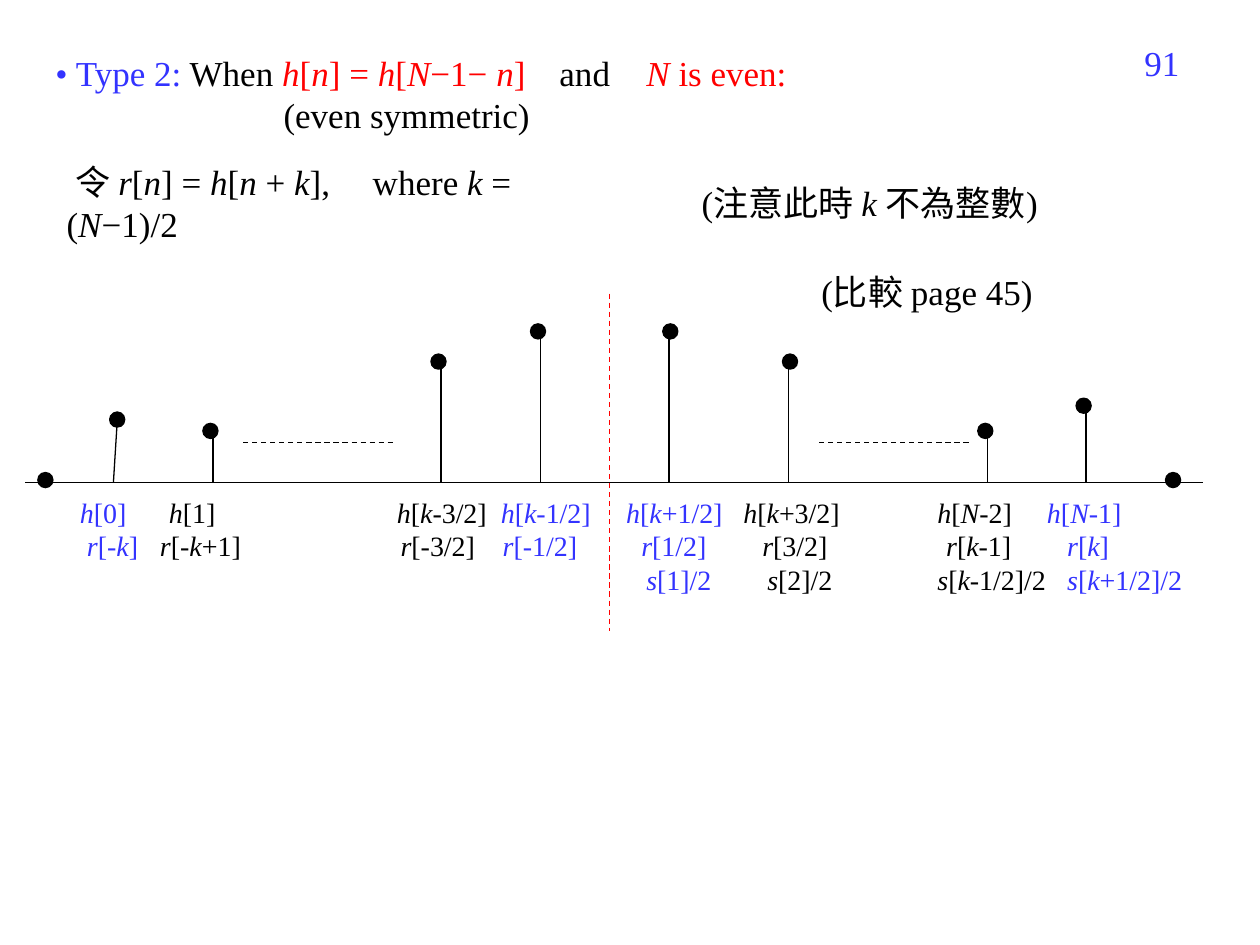
from collections import namedtuple
from dataclasses import dataclass

from lxml.etree import SubElement
from pptx import Presentation
from pptx.dml.color import RGBColor
from pptx.enum.dml import MSO_LINE as DASH
from pptx.enum.shapes import MSO_CONNECTOR as CONN, MSO_SHAPE as SHAPE
from pptx.enum.text import MSO_ANCHOR as ANCHOR, MSO_AUTO_SIZE as FIT, PP_ALIGN as ALIGN
from pptx.oxml.ns import qn
from pptx.util import Inches, Pt

CELL = 0.1  # inches per grid column and row; the slide is 100 by 75 cells


@dataclass(frozen=True)
class Theme:
    font: str = "Times New Roman"
    body: int = 20
    label: int = 16
    rule: float = 0.75
    black: RGBColor = RGBColor(0x00, 0x00, 0x00)
    white: RGBColor = RGBColor(0xFF, 0xFF, 0xFF)
    blue: RGBColor = RGBColor(0x33, 0x33, 0xFF)
    red: RGBColor = RGBColor(0xFF, 0x00, 0x00)


THEME = Theme()
Stem = namedtuple("Stem", "foot top dot_x dot_y")

AXIS = 38.3
DOT = 1.2
STEMS = [
    Stem(9.0, 9.3, 9.3, 33.3),
    Stem(16.9, 16.9, 16.7, 34.2),
    Stem(35.0, 35.0, 34.8, 28.7),
    Stem(42.9, 42.9, 42.7, 26.3),
    Stem(53.1, 53.1, 53.2, 26.3),
    Stem(62.6, 62.6, 62.7, 28.7),
    Stem(78.4, 78.4, 78.2, 34.2),
    Stem(86.2, 86.2, 86.0, 32.2),
]
AXIS_ENDS = [(3.6, 38.1), (93.1, 38.1)]

# Asterisks enclose italics; each label starts at its own tab stop.
BLUE_COLUMNS = {0, 3, 4, 7}
LABEL_ROWS = [
    (0, ["*h*[0]", "*h*[1]", "*h*[*k*-3/2]", "*h*[*k*-1/2]",
         "*h*[*k*+1/2]", "*h*[*k*+3/2]", "*h*[*N*-2]", "*h*[*N*-1]"],
     [4.35, 11.4, 29.5, 37.75, 47.7, 57.0, 72.4, 81.1]),
    (0, ["*r*[-*k*]", "*r*[-*k*+1]", "*r*[-3/2]", "*r*[-1/2]",
         "*r*[1/2]", "*r*[3/2]", "*r*[*k*-1]", "*r*[*k*]"],
     [4.9, 10.7, 29.8, 37.9, 48.9, 58.5, 73.1, 82.7]),
    (4, ["*s*[1]/2", "*s*[2]/2", "*s*[*k*-1/2]/2", "*s*[*k*+1/2]/2"],
     [49.3, 58.9, 72.4, 82.7]),
]


def cells(*values):
    return [Inches(v * CELL) for v in values]


class Board:
    """Holds the theme and the current slide, and draws on its grid."""

    def __init__(self, slide, theme):
        self.slide, self.theme = slide, theme

    def fill_frame(self, tf, paragraphs, size, **fmt):
        """Fill a frame with (pieces, tab stops) paragraphs; a piece is (markup, colour)."""
        frame = {"word_wrap": True, "auto_size": FIT.NONE,
                 "vertical_anchor": ANCHOR.TOP, **fmt}
        align = frame.pop("align", ALIGN.LEFT)
        for name, value in frame.items():
            setattr(tf, name, value)
        for i, (pieces, stops) in enumerate(paragraphs):
            p = tf.paragraphs[0] if i == 0 else tf.add_paragraph()
            p.alignment = align
            if stops:
                tabs = SubElement(p._p.get_or_add_pPr(), qn("a:tabLst"))
                for pos in cells(*stops):
                    SubElement(tabs, qn("a:tab"), pos=str(int(pos)), algn="l")
            for markup, color in pieces:
                self.runs(p, markup, color, size)

    def runs(self, p, markup, color, size):
        for i, part in enumerate(markup.split("*")):
            if part:
                r = p.add_run()
                r.text = part
                style = {"name": self.theme.font, "size": Pt(size),
                         "italic": i % 2 == 1, "bold": False}
                for name, value in style.items():
                    setattr(r.font, name, value)
                r.font.color.rgb = color

    def title(self, box, paragraphs):
        sp = self.slide.shapes.title
        for name, value in zip(("left", "top", "width", "height"), cells(*box)):
            setattr(sp, name, value)
        self.fill_frame(sp.text_frame, paragraphs, self.theme.body)

    def text(self, box, markup, color=None, stops=(), **fmt):
        sp = self.slide.shapes.add_textbox(*cells(*box))
        pieces = [(markup, color or self.theme.black)]
        self.fill_frame(sp.text_frame, [(pieces, stops)], self.theme.body, **fmt)

    def panel(self, box, paragraphs):
        sp = self.slide.shapes.add_shape(SHAPE.RECTANGLE, *cells(*box))
        sp.shadow.inherit = False
        sp.fill.solid()
        sp.fill.fore_color.rgb = self.theme.white
        sp.line.fill.background()
        margins = {f"margin_{side}": 0 for side in ("left", "top", "right", "bottom")}
        self.fill_frame(sp.text_frame, paragraphs, self.theme.label, **margins)

    def line(self, start, end, color=None, dash=None):
        ln = self.slide.shapes.add_connector(CONN.STRAIGHT, *cells(*start, *end))
        ln.line.color.rgb = color or self.theme.black
        ln.line.width = Pt(self.theme.rule)
        if dash:
            ln.line.dash_style = dash
        SubElement(ln._element.spPr, qn("a:effectLst"))

    def dot(self, x, y):
        sp = self.slide.shapes.add_shape(
            SHAPE.OVAL, *cells(x - DOT / 2, y - DOT / 2, DOT, DOT))
        sp.shadow.inherit = False
        sp.fill.solid()
        sp.fill.fore_color.rgb = sp.line.color.rgb = self.theme.black
        sp.line.width = Pt(self.theme.rule)


def label_paragraphs():
    for first, labels, stops in LABEL_ROWS:
        yield [("\t" + label, THEME.blue if col in BLUE_COLUMNS else THEME.black)
               for col, label in enumerate(labels, first)], stops


def draw_stem_plot(board):
    board.line((2, AXIS), (95.5, AXIS))
    for stem in STEMS:
        board.line((stem.top, stem.dot_y + 0.2), (stem.foot, AXIS))
    for left in (19.3, 65.0):
        board.line((left, 35.1), (left + 12.1, 35.1), dash=DASH.DASH)
    for x, y in AXIS_ENDS + [(s.dot_x, s.dot_y) for s in STEMS]:
        board.dot(x, y)
    board.panel((2, 39.3, 92.4, 7.5), label_paragraphs())
    board.line((48.4, 23.3), (48.4, 50.1), THEME.red, DASH.DASH)


def main():
    prs = Presentation()
    prs.slide_width, prs.slide_height = cells(100, 75)
    board = Board(prs.slides.add_slide(prs.slide_layouts[5]), THEME)

    board.title((2.7, 3.6, 67.7, 7.7), [
        ([("\t• Type 2:", THEME.blue), (" When ", THEME.black),
          ("*h*[*n*] = *h*[*N*−1− *n*]", THEME.red), ("\tand\t", THEME.black),
          ("*N* is even:", THEME.red)], [0.7, 40.7, 47.6]),
        ([("\t(even symmetric)", THEME.black)], [18.8]),
    ])
    board.text((71.3, 2.8, 23.3, 5.2), "91", THEME.blue, align=ALIGN.RIGHT)
    board.text((4.3, 13.9, 46.1, 4.3),
               "\t令 *r*[*n*] = *h*[*n* + *k*],\twhere *k* = (*N*−1)/2",
               stops=[0.7, 24.3], vertical_anchor=ANCHOR.MIDDLE)
    board.text((54.7, 13.9, 32.3, 4.3), "(注意此時 *k *不為整數)")
    draw_stem_plot(board)
    board.text((64.2, 21, 25.2, 4.4), "(比較 page 45)")
    prs.save("out.pptx")


if __name__ == "__main__":
    main()
